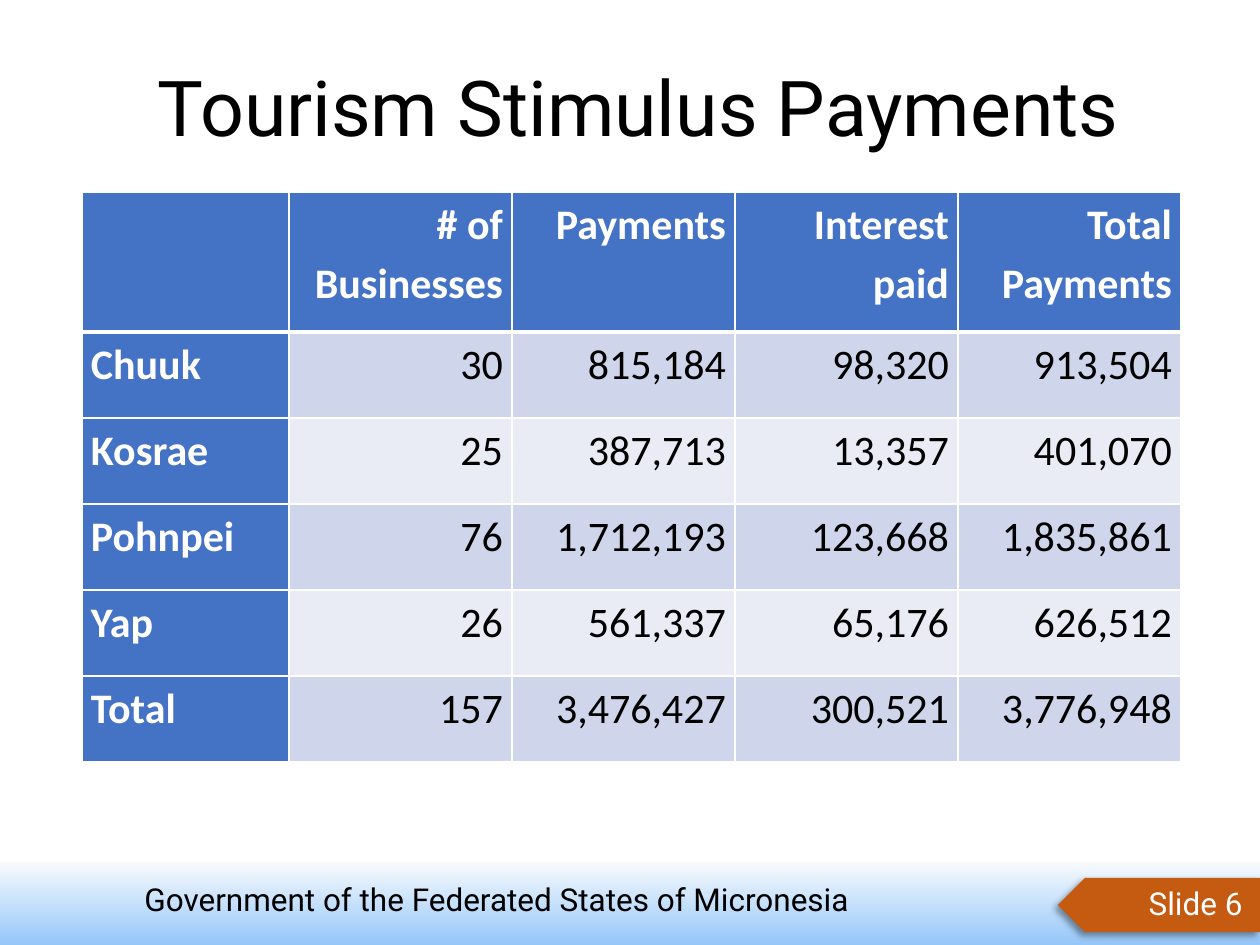
"""Build the tourism stimulus payments slide."""
import lxml.etree
import pptx
import pptx.dml.color
import pptx.enum.dml
import pptx.enum.shapes
import pptx.enum.text
import pptx.oxml
import pptx.oxml.ns
import pptx.util

RGBColor = pptx.dml.color.RGBColor
ALIGN = pptx.enum.text.PP_ALIGN
ANCHOR = pptx.enum.text.MSO_ANCHOR
SHAPE = pptx.enum.shapes.MSO_SHAPE

BLACK = RGBColor(0x00, 0x00, 0x00)
WHITE = RGBColor(0xFF, 0xFF, 0xFF)
BLUE = RGBColor(0x44, 0x72, 0xC4)
BANDS = RGBColor(0xCF, 0xD5, 0xEA), RGBColor(0xE9, 0xEB, 0xF5)
ORANGE = RGBColor(0xC5, 0x5A, 0x11)
FOOTER_COLORS = RGBColor(0xF7, 0xFA, 0xFD), RGBColor(0x95, 0xC7, 0xF9)

ROWS = [
    ("", "# of Businesses", "Payments", "Interest paid", "Total Payments"),
    ("Chuuk", "30", "815,184", "98,320", "913,504"),
    ("Kosrae", "25", "387,713", "13,357", "401,070"),
    ("Pohnpei", "76", "1,712,193", "123,668", "1,835,861"),
    ("Yap", "26", "561,337", "65,176", "626,512"),
    ("Total", "157", "3,476,427", "300,521", "3,776,948"),
]
COLUMN_WIDTHS = [207] + [223] * 4
ROW_HEIGHTS = [140] + [86] * 5
TABLE_LEFT, TABLE_TOP = 82, 192

TEXTS = [
    ("Government of the Federated States of Micronesia",
     (132, 874, 732, 50), 18, BLACK, ALIGN.LEFT, ANCHOR.TOP, 1.0),
    ("Slide 6", (1092, 878, 163, 50), 18, WHITE, ALIGN.RIGHT, ANCHOR.MIDDLE, 1.0),
    ("Tourism Stimulus Payments",
     (96, 49, 1086, 126), 44, BLACK, ALIGN.CENTER, ANCHOR.MIDDLE, 0.9),
]


def px(length):
    return pptx.util.Emu(round(length * 914400 / 126))


def box(values):
    return [px(value) for value in values]


def add_run(paragraph, text, font_name, size, color, bold=False):
    run = paragraph.add_run()
    run.text = text
    run.font.name = font_name
    run.font.size = pptx.util.Pt(size)
    run.font.bold = bold
    run.font.color.rgb = color


def add_text(slide, text, place, size, color, align, anchor, spacing):
    frame = slide.shapes.add_textbox(*box(place)).text_frame
    frame.word_wrap = True
    frame.vertical_anchor = anchor
    paragraph = frame.paragraphs[0]
    paragraph.alignment = align
    paragraph.line_spacing = spacing
    add_run(paragraph, text, "Roboto", size, color)


def add_footer(slide):
    band = slide.shapes.add_shape(SHAPE.TRAPEZOID, *box((0, 862, 1260, 83)))
    band.adjustments[0] = 0
    band.shadow.inherit = False
    band.line.fill.background()
    band.fill.gradient()
    band.fill.gradient_angle = 270
    for stop, color in zip(band.fill.gradient_stops, FOOTER_COLORS):
        stop.color.rgb = color


def add_number_tag(slide):
    tag = slide.shapes.add_shape(SHAPE.PENTAGON, *box((1058, 878, 202, 54)))
    tag.fill.solid()
    tag.fill.fore_color.rgb = ORANGE
    tag.line.fill.background()
    tag.shadow.inherit = False
    properties = tag._element.spPr
    properties.xfrm.set("flipH", "1")
    effects = properties.find(pptx.oxml.ns.qn("a:effectLst"))
    effects.append(pptx.oxml.parse_xml(
        f'<a:outerShdw {pptx.oxml.ns.nsdecls("a")} blurRad="50800" dist="38100" '
        'dir="8100000" algn="tr" rotWithShape="0"><a:srgbClr val="000000">'
        '<a:alpha val="40000"/></a:srgbClr></a:outerShdw>'))


def set_borders(cell, widths):
    properties = cell._tc.get_or_add_tcPr()
    for index, (side, width) in enumerate(widths.items()):
        properties.insert(index, pptx.oxml.parse_xml(
            f'<a:ln{side} {pptx.oxml.ns.nsdecls("a")} w="{pptx.util.Pt(width)}">'
            f'<a:solidFill><a:srgbClr val="{WHITE}"/></a:solidFill></a:ln{side}>'))


def fill_cell(cell, text, row, column):
    heading = row == 0 or column == 0
    cell.fill.solid()
    cell.fill.fore_color.rgb = BLUE if heading else BANDS[(row - 1) % 2]
    cell.margin_left = cell.margin_right = px(9)
    cell.margin_top = cell.margin_bottom = 0
    set_borders(cell, {"L": 1, "R": 1, "T": 3 if row == 1 else 1,
                       "B": 3 if row == 0 else 1})
    if text:
        paragraph = cell.text_frame.paragraphs[0]
        paragraph.alignment = ALIGN.RIGHT if column else ALIGN.JUSTIFY
        paragraph.line_spacing = 1.15
        paragraph.space_after = pptx.util.Pt(3)
        add_run(paragraph, text, "Calibri", 24, WHITE if heading else BLACK, heading)


def add_payments_table(slide):
    place = TABLE_LEFT, TABLE_TOP, sum(COLUMN_WIDTHS), sum(ROW_HEIGHTS)
    table = slide.shapes.add_table(len(ROWS), len(COLUMN_WIDTHS), *box(place)).table
    table.first_col = True
    for column, width in zip(table.columns, COLUMN_WIDTHS):
        column.width = px(width)
    for row, height in zip(table.rows, ROW_HEIGHTS):
        row.height = px(height)
    for row, texts in enumerate(ROWS):
        for column, text in enumerate(texts):
            fill_cell(table.cell(row, column), text, row, column)


def main():
    presentation = pptx.Presentation()
    presentation.slide_width, presentation.slide_height = px(1260), px(945)
    slide = presentation.slides.add_slide(presentation.slide_layouts[6])
    add_footer(slide)
    add_number_tag(slide)
    for text in TEXTS:
        add_text(slide, *text)
    add_payments_table(slide)
    presentation.save("out.pptx")


if __name__ == "__main__":
    main()
